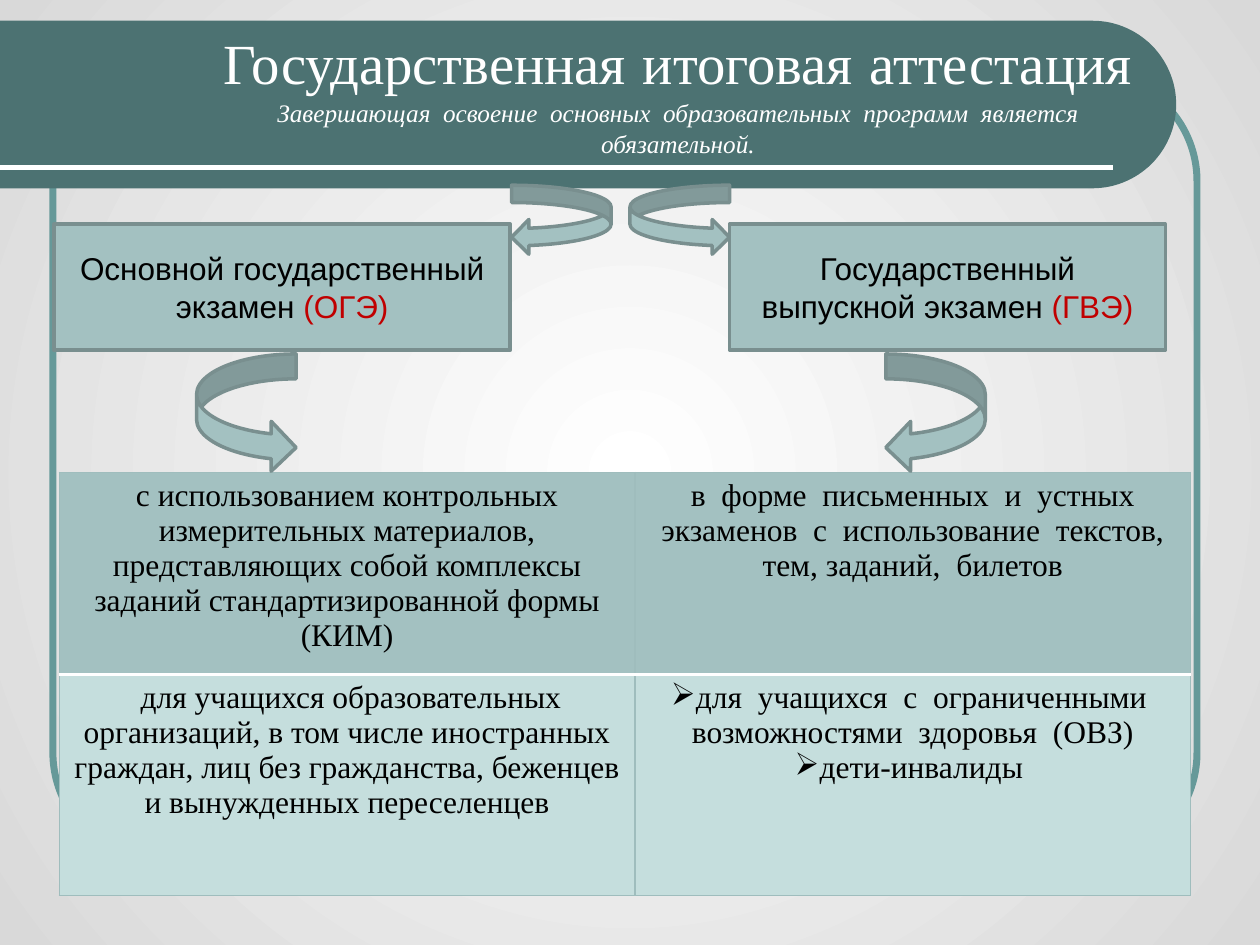
from dataclasses import dataclass
from math import cos, pi, sin

from lxml.etree import SubElement as Sub
from pptx import Presentation
from pptx.dml.color import RGBColor as Rgb
from pptx.enum.shapes import MSO_CONNECTOR as Conn, MSO_SHAPE as Geo
from pptx.enum.text import MSO_ANCHOR as Anchor, PP_ALIGN as Align
from pptx.oxml.ns import qn
from pptx.util import Inches, Pt

HUES = {
    "white": "FFFFFF", "grey": "D9D9D9", "frame": "669999", "band": "4C7272",
    "teal": "A3C1C1", "edge": "798F8F", "pale": "C5DEDD", "grid": "9FBDBD",
    "black": "000000", "red": "C00000",
}
SERIF, SANS = "Times New Roman", "Arial"


@dataclass
class Run:
    text: str
    size: float = 18
    font: str = SERIF
    hue: str = "black"
    slant: bool = False


@dataclass
class Box:
    geo: int
    x: float
    y: float
    w: float
    h: float
    runs: tuple = ()


@dataclass
class Cell:
    lines: tuple
    hue: str
    mark: str = ""


def rgb(name: str) -> Rgb:
    return Rgb.from_string(HUES[name])


def add_run(para, run: Run) -> None:
    para.alignment = Align.CENTER
    part = para.add_run()
    part.text = run.text
    font = part.font
    font.size, font.name, font.italic = Pt(run.size), run.font, run.slant
    font.color.rgb = rgb(run.hue)


def draw_box(slide, box: Box, fill: str = "teal", edge: str = "edge", width: float = 2):
    shape = slide.shapes.add_shape(
        box.geo, Inches(box.x), Inches(box.y), Inches(box.w), Inches(box.h))
    shape.shadow.inherit = False
    if fill:
        shape.fill.solid()
        shape.fill.fore_color.rgb = rgb(fill)
    else:
        shape.fill.background()
    shape.line.color.rgb = rgb(edge)
    shape.line.width = Pt(width)
    if box.runs:
        shape.text_frame.word_wrap = True
        shape.text_frame.vertical_anchor = Anchor.MIDDLE
        for run in box.runs:
            add_run(shape.text_frame.paragraphs[0], run)
    return shape


def draw_back(slide) -> None:
    fill = slide.background.fill
    fill.gradient()
    for stop, (spot, hue) in zip(fill.gradient_stops, ((0, "white"), (1, "grey"))):
        stop.position = spot
        stop.color.rgb = rgb(hue)
    grad = slide.element.find(".//" + qn("a:gradFill"))
    grad.remove(grad.find(qn("a:lin")))
    round_to = Sub(grad, qn("a:path"), {"path": "circle"})
    Sub(round_to, qn("a:fillToRect"), {side: "50000" for side in "ltrb"})


def draw_band(slide) -> None:
    frame = draw_box(slide, Box(Geo.ROUNDED_RECTANGLE, 0.42, 0.58, 9.08, 6.25), "", "frame", 4)
    frame.adjustments[0] = 0.137
    mid, rad, steps = 0.83, 0.665, 60
    arc = [(8.67 + rad * sin(pi * i / steps), mid - rad * cos(pi * i / steps))
           for i in range(steps + 1)]
    pen = slide.shapes.build_freeform(0, Inches(mid - rad))
    pen.add_line_segments(
        [(Inches(x), Inches(y)) for x, y in arc + [(0, mid + rad)]], close=True)
    band = pen.convert_to_shape()
    band.shadow.inherit = False
    band.fill.solid()
    band.fill.fore_color.rgb = rgb("band")
    band.line.fill.background()
    rule = slide.shapes.add_connector(
        Conn.STRAIGHT, 0, Inches(1.33), Inches(8.83), Inches(1.33))
    rule.line.color.rgb = rgb("white")
    rule.line.width = Pt(3)
    Sub(rule.element.spPr, qn("a:effectLst"))


def draw_title(slide) -> None:
    frame = slide.shapes.add_textbox(
        Inches(1.54), Inches(0.44), Inches(7.68), Inches(0.96)).text_frame
    frame.word_wrap = True
    frame.vertical_anchor = Anchor.MIDDLE
    frame.margin_top, frame.margin_bottom = 0, Inches(0.44)
    para = frame.paragraphs[0]
    for text, size in (("Государственная", 32.4), (" ", 37.8), ("итоговая", 32.4),
                       (" ", 37.8), ("аттестация", 32.4)):
        add_run(para, Run(text, size, hue="white"))
    para.add_line_break()
    add_run(para, Run("Завершающая  освоение  основных  образовательных  программ  "
                      "является обязательной.", 14.4, hue="white", slant=True))


def set_edge(cell, spot: int, side: str, hue: str, width: float) -> None:
    props = cell._tc.get_or_add_tcPr()
    line = Sub(props, qn("a:ln" + side), {"w": str(Pt(width))})
    props.insert(spot, line)
    Sub(Sub(line, qn("a:solidFill")), qn("a:srgbClr"), {"val": HUES[hue]})


def fill_cell(cell, data: Cell, inner: str) -> None:
    cell.fill.solid()
    cell.fill.fore_color.rgb = rgb(data.hue)
    for spot, side in enumerate("LRTB"):
        hue, width = ("white", 2) if side == inner else ("grid", 0.75)
        set_edge(cell, spot, side, hue, width)
    frame = cell.text_frame
    for i, text in enumerate(data.lines):
        para = frame.add_paragraph() if i else frame.paragraphs[0]
        add_run(para, Run(text))
        if data.mark:
            props = para._p.get_or_add_pPr()
            props.set("marL", "0")
            props.set("indent", "0")
            Sub(props, qn("a:buChar"), {"char": data.mark})


def draw_table(slide, rows: tuple) -> None:
    wide, high = (4.57, 4.41), (1.52, 1.76)
    table = slide.shapes.add_table(
        2, 2, Inches(0.47), Inches(3.75), Inches(sum(wide)), Inches(sum(high))).table
    table.first_row = table.horz_banding = False
    for col, size in zip(table.columns, wide):
        col.width = Inches(size)
    for row, size in zip(table.rows, high):
        row.height = Inches(size)
    for r, row in enumerate(rows):
        for c, data in enumerate(row):
            fill_cell(table.cell(r, c), data, "BT"[r])


EXAMS = (
    Box(Geo.RECTANGLE, 0.43, 1.78, 3.62, 1, (
        Run("Основной государственный экзамен ", font=SANS),
        Run("(ОГЭ)", font=SANS, hue="red"))),
    Box(Geo.RECTANGLE, 5.79, 1.78, 3.46, 1, (
        Run("Государственный выпускной экзамен ", font=SANS),
        Run("(ГВЭ)", font=SANS, hue="red"))),
)
ARROWS = (
    Box(Geo.CURVED_LEFT_ARROW, 4.06, 1.47, 0.79, 0.55),
    Box(Geo.CURVED_RIGHT_ARROW, 5, 1.47, 0.79, 0.55),
    Box(Geo.CURVED_LEFT_ARROW, 7.03, 2.81, 0.79, 0.94),
    Box(Geo.CURVED_RIGHT_ARROW, 1.56, 2.81, 0.79, 0.94),
)
ROWS = (
    (Cell(("с использованием контрольных измерительных материалов, представляющих "
           "собой комплексы заданий стандартизированной формы (КИМ)",), "teal"),
     Cell((" в  форме  письменных  и  устных  экзаменов  с  использование  текстов, "
           "тем, заданий,  билетов",), "teal")),
    (Cell((" для учащихся образовательных организаций, в том числе иностранных "
           "граждан, лиц без гражданства, беженцев и вынужденных переселенцев",), "pale"),
     Cell(("для  учащихся  с  ограниченными  возможностями  здоровья  (ОВЗ)",
           "дети-инвалиды "), "pale", "➢")),
)


def main() -> None:
    deck = Presentation()
    deck.slide_width, deck.slide_height = Inches(10), Inches(7.5)
    slide = deck.slides.add_slide(deck.slide_layouts[6])
    draw_back(slide)
    draw_band(slide)
    draw_title(slide)
    for box in EXAMS + ARROWS[:2]:
        draw_box(slide, box)
    draw_table(slide, ROWS)
    for box in ARROWS[2:]:
        draw_box(slide, box)
    deck.save("out.pptx")


if __name__ == "__main__":
    main()
